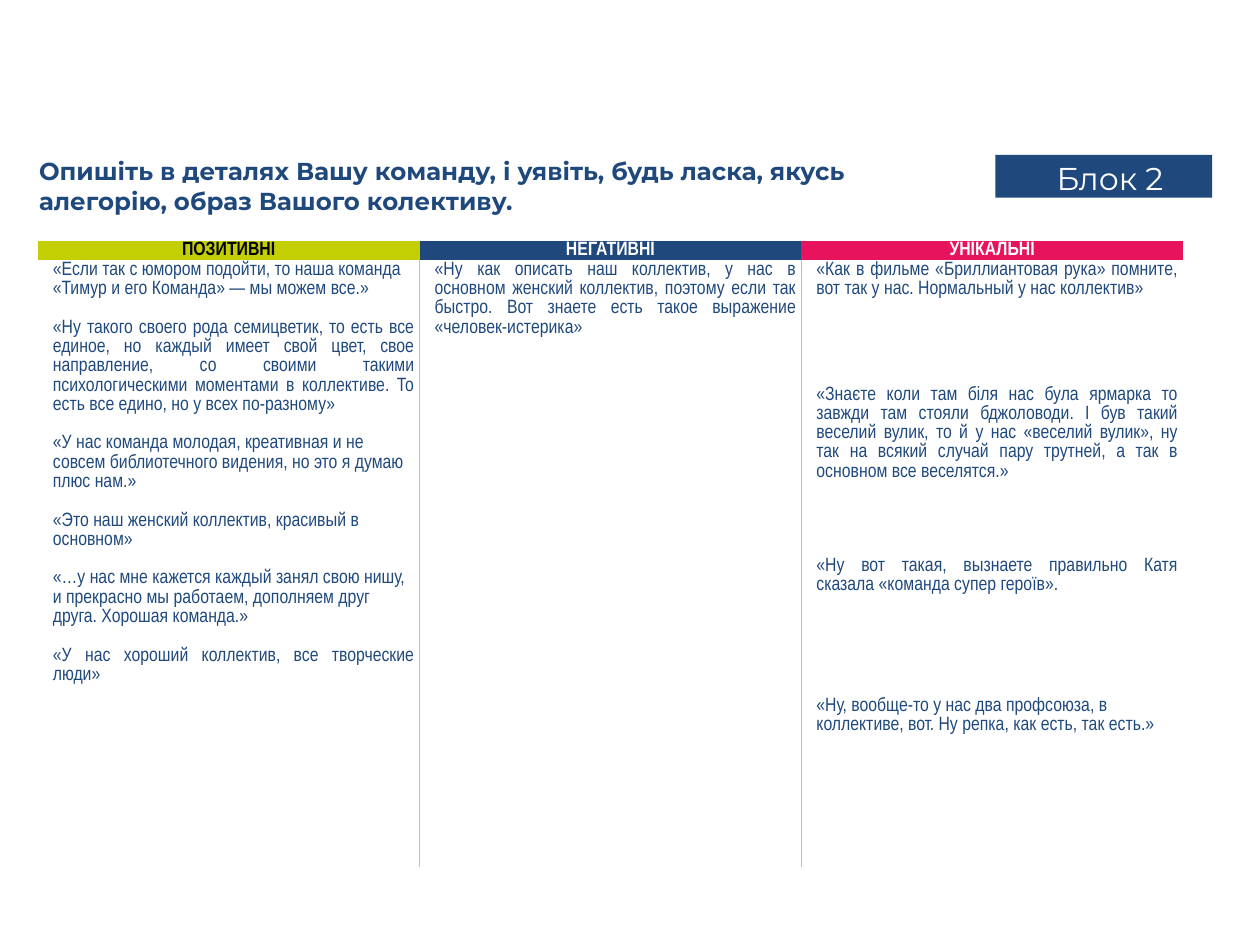
from lxml.etree import SubElement
from pptx import Presentation
from pptx.dml.color import RGBColor
from pptx.enum.shapes import MSO_SHAPE
from pptx.enum.text import MSO_ANCHOR, MSO_AUTO_SIZE, PP_ALIGN
from pptx.oxml import parse_xml
from pptx.oxml.ns import nsdecls, qn
from pptx.util import Inches, Pt

COLOURS = {
    "navy": "1F497D",
    "lime": "C3CF02",
    "pink": "E7135C",
    "grey": "BFBFBF",
    "white": "FFFFFF",
    "black": "000000",
}
LEFT, CENTER, JUSTIFY = PP_ALIGN.LEFT, PP_ALIGN.CENTER, PP_ALIGN.JUSTIFY
NO_STYLE = "{2D5ABB26-0587-4C30-8999-92F81FD0307C}"

TITLE = "Опишіть в деталях Вашу команду, і уявіть, будь ласка, якусь алегорію, образ Вашого колективу."
BADGE = "Блок 2"
HEADERS = [
    ("ПОЗИТИВНІ", "lime", "black"),
    ("НЕГАТИВНІ", "navy", "white"),
    ("УНІКАЛЬНІ", "pink", "white"),
]
POSITIVE = [
    ("«Если так с юмором подойти, то наша команда «Тимур и его Команда» — мы можем все.»", LEFT),
    ("«Ну такого своего рода семицветик, то есть все единое, но каждый имеет свой цвет, свое "
     "направление, со своими такими психологическими моментами в коллективе. "
     "То есть все едино, но у всех по-разному»", JUSTIFY),
    ("«У нас команда молодая, креативная и не совсем библиотечного видения, но это я думаю плюс нам.»", LEFT),
    ("«Это наш женский коллектив, красивый в основном»", LEFT),
    ("«…у нас мне кажется каждый занял свою нишу, и прекрасно мы работаем, дополняем друг друга. "
     "Хорошая команда.»", LEFT),
    ("«У нас хороший коллектив, все творческие люди»", JUSTIFY),
]
NEGATIVE = [
    ("«Ну как описать наш коллектив, у нас в основном женский коллектив, поэтому если так быстро. "
     "Вот знаете есть такое выражение «человек-истерика»", JUSTIFY),
]
UNIQUE = [
    ("«Как в фильме «Бриллиантовая рука» помните, вот так у нас. Нормальный у нас коллектив»", JUSTIFY),
    ("«Знаєте коли там біля нас була ярмарка то завжди там стояли бджоловоди. І був такий веселий "
     "вулик, то й у нас «веселий вулик», ну так на всякий случай пару трутней, "
     "а так в основном все веселятся.»", JUSTIFY),
    ("«Ну вот такая, вызнаете правильно Катя сказала «команда супер героїв».", JUSTIFY),
    ("«Ну, вообще-то у нас два профсоюза, в коллективе, вот. Ну репка, как есть, так есть.»", LEFT),
]
QUOTES = {(1, 0): POSITIVE, (1, 1): NEGATIVE}
QUOTES.update({(row, 2): [quote] for row, quote in enumerate(UNIQUE, start=1)})

COLUMN_WIDTH = 3.03
ROW_HEIGHTS = [0.12, 0.99, 1.36, 1.11, 1.11, 0.25]


def colour(name):
    return RGBColor.from_string(COLOURS[name])


def write(frame, lines, font, size, ink, bold=False, spacing=None, gap=0):
    for index, (text, align) in enumerate(lines):
        para = frame.paragraphs[0] if index == 0 else frame.add_paragraph()
        para.text = text
        para.alignment = align
        if spacing:
            para.line_spacing = spacing
        if index:
            para.space_before = Pt(gap)
        for span in para.runs:
            span.font.name = font
            span.font.size = Pt(size)
            span.font.bold = bold
            span.font.color.rgb = colour(ink)


def set_margins(target, left=0, top=0, right=0):
    target.margin_left, target.margin_top = Inches(left), Inches(top)
    target.margin_right, target.margin_bottom = Inches(right), 0
    target.vertical_anchor = MSO_ANCHOR.TOP


def add_title(page):
    title = page.shapes.title
    title.left, title.top, title.width, title.height = map(Inches, (0.3, 1.23, 6.75, 0.48))
    frame = title.text_frame
    frame.word_wrap = True
    frame.auto_size = MSO_AUTO_SIZE.NONE
    set_margins(frame, left=0.01, top=0.01)
    write(frame, [(TITLE, LEFT)], "Montserrat", 14, "navy", bold=True)


def add_badge(page):
    badge = page.shapes.add_shape(MSO_SHAPE.RECTANGLE, *map(Inches, (7.9, 1.23, 1.72, 0.34)))
    badge.shadow.inherit = False
    badge.fill.solid()
    badge.fill.fore_color.rgb = colour("navy")
    badge.line.fill.background()
    set_margins(badge.text_frame, left=0.1, top=0.03)
    write(badge.text_frame, [(BADGE, CENTER)], "Montserrat", 18, "white")


def add_side_borders(cell, sides):
    properties = cell._tc.get_or_add_tcPr()
    for index, side in enumerate(sides):
        properties.insert(index, parse_xml(
            f'<a:ln{side} {nsdecls("a")} w="12700"><a:solidFill>'
            f'<a:srgbClr val="{COLOURS["grey"]}"/></a:solidFill></a:ln{side}>'))


def add_table(page):
    rows, columns = len(ROW_HEIGHTS), len(HEADERS)
    holder = page.shapes.add_table(rows, columns, Inches(0.3), Inches(1.91),
                                   Inches(COLUMN_WIDTH * columns), Inches(sum(ROW_HEIGHTS)))
    table = holder.table
    table.first_row = table.horz_banding = False
    table._tbl.tblPr.find(qn("a:tableStyleId")).text = NO_STYLE
    for column in table.columns:
        column.width = Inches(COLUMN_WIDTH)
    for row, height in zip(table.rows, ROW_HEIGHTS):
        row.height = Inches(height)

    for index, (text, fill, ink) in enumerate(HEADERS):
        cell = table.cell(0, index)
        set_margins(cell, left=0.04, right=0.04)
        cell.fill.solid()
        cell.fill.fore_color.rgb = colour(fill)
        write(cell.text_frame, [(text, CENTER)], "Arial Narrow", 11, ink, bold=True, spacing=1.07)

    for row in range(1, rows):
        for column, sides in enumerate(("R", "LR", "L")):
            cell = table.cell(row, column)
            set_margins(cell, left=0.12, right=0.04)
            cell.fill.background()
            add_side_borders(cell, sides)
            if (row, column) in QUOTES:
                write(cell.text_frame, QUOTES[row, column], "Arial Narrow", 11, "navy",
                      spacing=1.07, gap=11)
            else:
                SubElement(cell.text_frame.paragraphs[0]._p, qn("a:endParaRPr"), sz="1100")
    table.cell(1, 0).merge(table.cell(rows - 1, 0))


def main():
    """Build the slide with team descriptions sorted into three columns."""
    deck = Presentation()
    deck.slide_width, deck.slide_height = Inches(10), Inches(7.5)
    page = deck.slides.add_slide(deck.slide_layouts[5])
    add_badge(page)
    add_title(page)
    add_table(page)
    deck.save("out.pptx")


if __name__ == "__main__":
    main()
